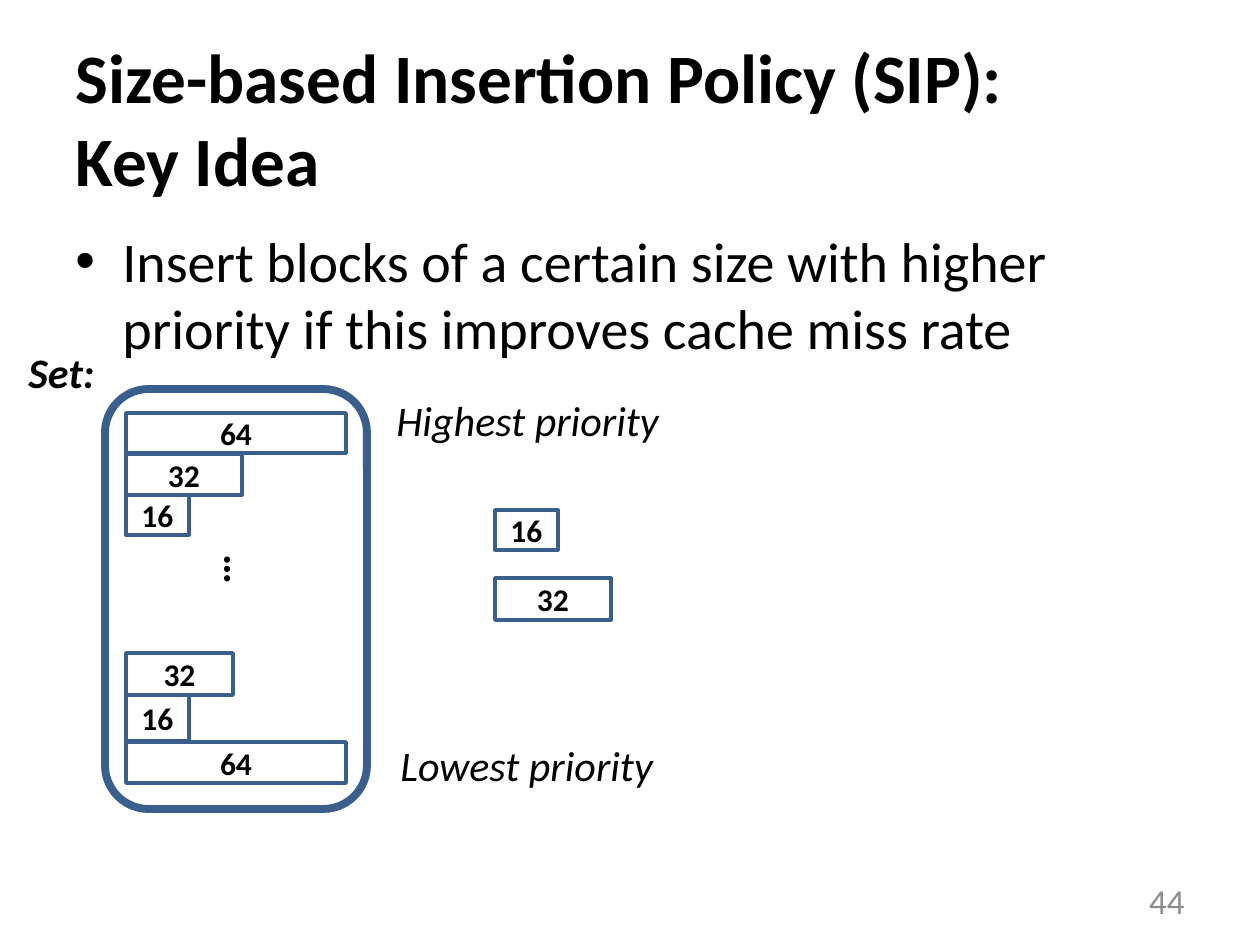
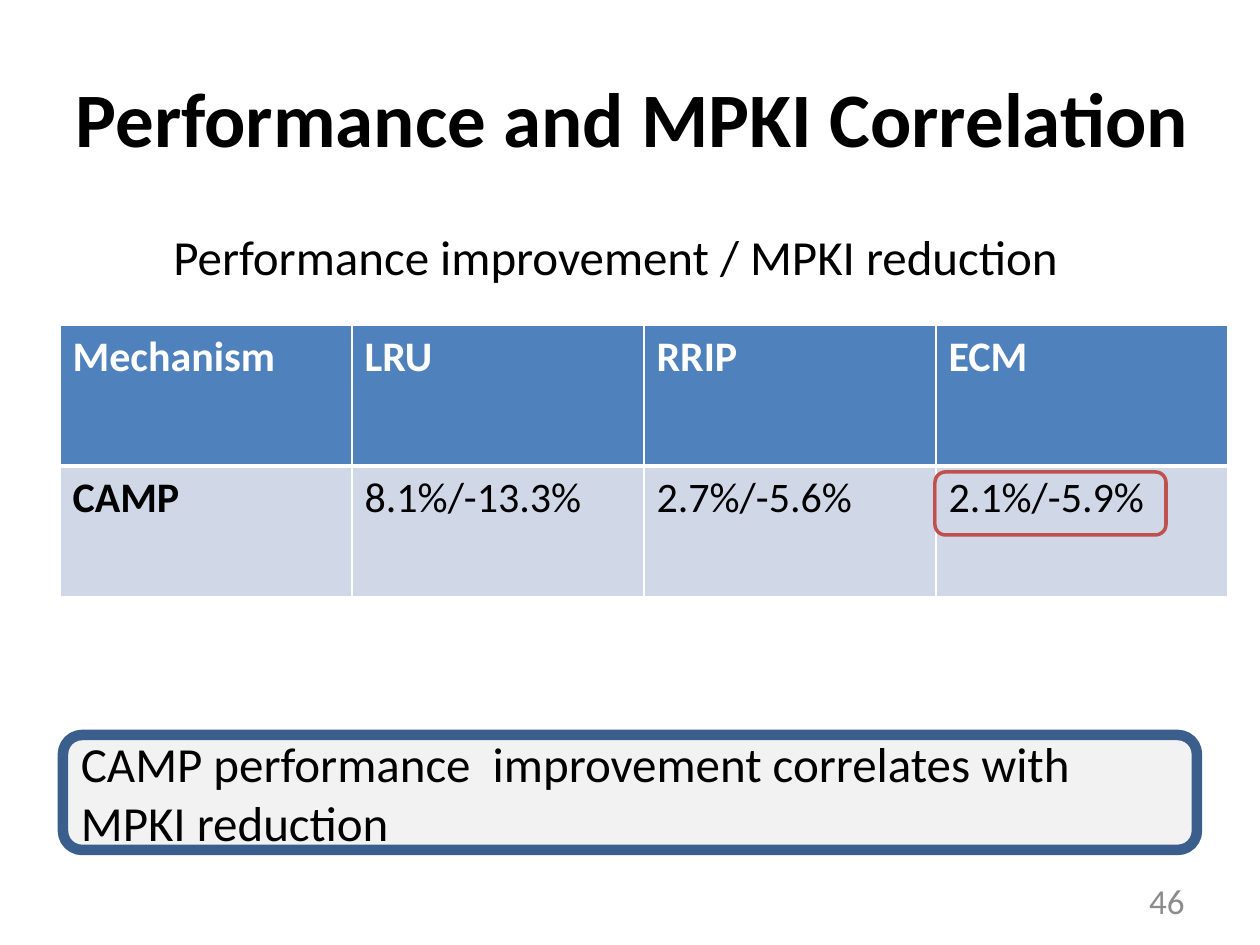
from lxml import etree
from pptx import Presentation
from pptx.dml.color import RGBColor
from pptx.enum.shapes import MSO_SHAPE
from pptx.enum.text import MSO_ANCHOR, MSO_AUTO_SIZE, PP_ALIGN
from pptx.oxml.ns import qn
from pptx.util import Emu, Pt

RECT = MSO_SHAPE.RECTANGLE
ROUNDED = MSO_SHAPE.ROUNDED_RECTANGLE
LEFT, CENTER, RIGHT = PP_ALIGN.LEFT, PP_ALIGN.CENTER, PP_ALIGN.RIGHT
TOP, MIDDLE = MSO_ANCHOR.TOP, MSO_ANCHOR.MIDDLE
NO_AUTOFIT = MSO_AUTO_SIZE.NONE

PX_PER_INCH = 126
FONT = "Calibri"
BLACK, WHITE, GREY = "000000", "FFFFFF", "8C8C8C"
NAVY, RED = "3A5F8C", "C0504D"
HEADER_BLUE, ROW_BLUE, PANEL_GREY = "4F81BD", "D0D8E8", "F2F2F2"

# Cache blocks: width for each size, left edge inside the set
BLOCK_WIDTHS = {64: 220, 32: 116, 16: 63}
SET_BLOCK_LEFT = 126
INCOMING_LEFT = 495


def px(length):
    return Emu(round(length * 914400 / PX_PER_INCH))


def box(*lengths):
    return [px(length) for length in lengths]


def color(hex_code):
    return RGBColor.from_string(hex_code)


def write(frame, text, size, hex_code=BLACK, bold=False, italic=False,
          align=LEFT, anchor=TOP):
    """Fill a text frame; each line of the text becomes one run."""
    frame.vertical_anchor = anchor
    paragraph = frame.paragraphs[0]
    paragraph.alignment = align
    for index, line in enumerate(text.split("\n")):
        if index:
            paragraph.add_line_break()
        run = paragraph.add_run()
        run.text = line
        font = run.font
        font.name, font.size = FONT, Pt(size)
        font.bold, font.italic = bold, italic
        font.color.rgb = color(hex_code)
    return paragraph


def add_text(slide, place, text, size, wrap=True, **style):
    label = slide.shapes.add_textbox(*box(*place))
    label.text_frame.word_wrap = wrap
    write(label.text_frame, text, size, **style)
    return label


def add_outline(slide, preset, place, line, width, fill=None):
    outline = slide.shapes.add_shape(preset, *box(*place))
    outline.shadow.inherit = False
    outline.line.color.rgb = color(line)
    outline.line.width = Pt(width)
    if fill:
        outline.fill.solid()
        outline.fill.fore_color.rgb = color(fill)
    else:
        outline.fill.background()
    return outline


def add_block(slide, left, top, height, size, width=None):
    place = (left, top, width or BLOCK_WIDTHS[size], height)
    block = add_outline(slide, RECT, place, NAVY, 2)
    write(block.text_frame, str(size), 18, bold=True, align=CENTER, anchor=MIDDLE)


def add_bullet(paragraph, indent):
    properties = paragraph._p.get_or_add_pPr()
    properties.set("marL", str(px(indent)))
    properties.set("indent", str(-px(indent)))
    etree.SubElement(properties, qn("a:buFont")).set("typeface", "Arial")
    etree.SubElement(properties, qn("a:buChar")).set("char", "•")


def add_titled_slide(deck, title, title_size, number):
    slide = deck.slides.add_slide(deck.slide_layouts[5])
    heading = slide.shapes.title
    heading.left, heading.top, heading.width, heading.height = box(63, 38, 1166, 158)
    heading.text_frame.word_wrap = True
    heading.text_frame.auto_size = NO_AUTOFIT
    write(heading.text_frame, title, title_size, bold=True, anchor=MIDDLE)
    add_text(slide, (903, 876, 294, 50), str(number), 20,
             hex_code=GREY, align=RIGHT, anchor=MIDDLE)
    return slide


def set_borders(cell, **widths):
    """White borders; widths in points, keyed by side L, R, T, B."""
    properties = cell._tc.get_or_add_tcPr()
    for side in "LRTB":
        line = etree.SubElement(properties, qn(f"a:ln{side}"))
        line.set("w", str(Pt(widths.get(side, 1))))
        fill = etree.SubElement(line, qn("a:solidFill"))
        etree.SubElement(fill, qn("a:srgbClr")).set("val", WHITE)


def add_results_table(slide, place, rows, row_heights):
    table = slide.shapes.add_table(len(rows), len(rows[0]), *box(*place)).table
    table.horz_banding = False
    for column in table.columns:
        column.width = px(place[2] / len(rows[0]))
    for r, values in enumerate(rows):
        table.rows[r].height = px(row_heights[r])
        header = r == 0
        for c, value in enumerate(values):
            cell = table.cell(r, c)
            set_borders(cell, **({"B": 3} if header else {"T": 3}))
            cell.fill.solid()
            cell.fill.fore_color.rgb = color(HEADER_BLUE if header else ROW_BLUE)
            write(cell.text_frame, value, 24, WHITE if header else BLACK,
                  bold=header or c == 0)


def build_key_idea(deck):
    slide = add_titled_slide(
        deck, "Size-based Insertion Policy (SIP):\nKey Idea", 39.6, 44)
    idea = add_text(
        slide, (63, 220, 1092, 142),
        "Insert blocks of a certain size with higher priority "
        "if this improves cache miss rate", 32)
    idea_paragraph = idea.text_frame.paragraphs[0]
    idea_paragraph.space_before = Pt(1)
    add_bullet(idea_paragraph, 47)

    # Cache set, from highest to lowest priority
    add_outline(slide, ROUNDED, (105, 389, 262, 420), NAVY, 4.5)
    add_text(slide, (16, 340, 92, 63), "Set:", 24, wrap=False, bold=True, italic=True)
    add_text(slide, (384, 388, 291, 63), "Highest priority", 24, wrap=False, italic=True)
    add_text(slide, (388, 733, 281, 63), "Lowest priority", 24, wrap=False, italic=True)
    for top, height, size in ((413, 40, 64), (454, 41, 32), (495, 40, 16),
                              (695, 46, 16), (742, 41, 64)):
        add_block(slide, SET_BLOCK_LEFT, top, height, size)
    add_block(slide, SET_BLOCK_LEFT, 653, 42, 32, width=107)
    ellipsis = add_text(slide, (194, 558, 94, 63), "…", 24, bold=True)
    ellipsis.rotation = 90

    # Blocks waiting for insertion
    add_block(slide, INCOMING_LEFT, 510, 40, 16)
    add_block(slide, INCOMING_LEFT, 578, 42, 32)


def build_correlation(deck):
    slide = add_titled_slide(deck, "Performance and MPKI Correlation", 44, 46)
    caption = add_text(slide, (161, 220, 936, 73),
                       "Performance improvement / MPKI reduction", 28)
    caption.text_frame.paragraphs[0].space_before = Pt(1)

    # Results, with the comparison to ECM highlighted
    add_results_table(
        slide, (60, 325, 1168, 272),
        [("Mechanism", "LRU", "RRIP", "ECM"),
         ("CAMP", "8.1%/-13.3%", "2.7%/-5.6%", "2.1%/-5.9%")],
        (141, 131))
    add_outline(slide, ROUNDED, (935, 472, 231, 63), RED, 2)

    # Conclusion
    conclusion = add_outline(slide, ROUNDED, (63, 735, 1134, 115), NAVY, 6, PANEL_GREY)
    write(conclusion.text_frame,
          "CAMP performance  improvement correlates with MPKI reduction",
          28, anchor=MIDDLE)


def main():
    deck = Presentation()
    deck.slide_width, deck.slide_height = box(1260, 945)
    build_key_idea(deck)
    build_correlation(deck)
    deck.save("out.pptx")


if __name__ == "__main__":
    main()
